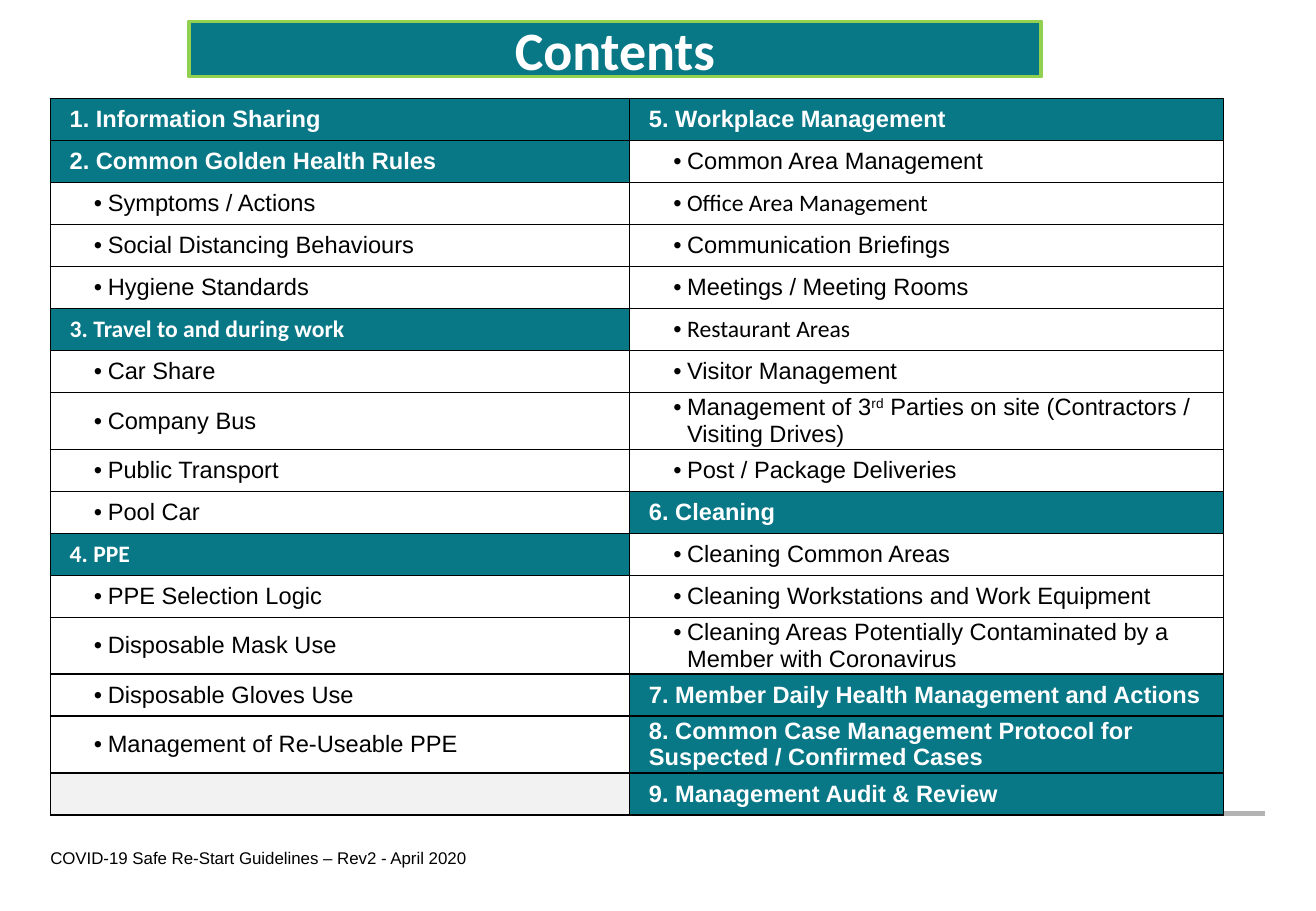
"""Build the contents slide of the safe re-start guidelines."""
from lxml import etree
from pptx import Presentation
from pptx.dml.color import RGBColor
from pptx.enum.shapes import MSO_CONNECTOR, MSO_SHAPE
from pptx.enum.text import MSO_ANCHOR, PP_ALIGN
from pptx.oxml import parse_xml
from pptx.oxml.ns import qn
from pptx.util import Pt

NS = 'xmlns:a="http://schemas.openxmlformats.org/drawingml/2006/main"'
TEAL, GREEN, WHITE, BLACK = "087786", "92D050", "FFFFFF", "000000"
GREY, PALE = "B3B3B3", "F2F2F2"
LEFT = 29.8
ROW_H, TALL_ROW_H = 24.9, 33.4
TALL_ROWS = (7, 12, 14)
CALIBRI_TEXTS = ("Office Area Management", "3. Travel to and during work",
                 "Restaurant Areas", "4. PPE")

LEFT_COLUMN = [
    "1. Information Sharing",
    "2. Common Golden Health Rules",
    "Symptoms / Actions",
    "Social Distancing Behaviours",
    "Hygiene Standards",
    "3. Travel to and during work",
    "Car Share",
    "Company Bus",
    "Public Transport",
    "Pool Car",
    "4. PPE",
    "PPE Selection Logic",
    "Disposable Mask Use",
    "Disposable Gloves Use",
    "Management of Re-Useable PPE",
    "",
]
RIGHT_COLUMN = [
    "5. Workplace Management",
    "Common Area Management",
    "Office Area Management",
    "Communication Briefings",
    "Meetings / Meeting Rooms",
    "Restaurant Areas",
    "Visitor Management",
    "Management of 3^rd^ Parties on site (Contractors / Visiting Drives)",
    "Post / Package Deliveries",
    "6. Cleaning",
    "Cleaning Common Areas",
    "Cleaning Workstations and Work Equipment",
    "Cleaning Areas Potentially Contaminated by a Member with Coronavirus",
    "7. Member Daily Health Management and Actions",
    "8. Common Case Management Protocol for Suspected / Confirmed Cases",
    "9. Management Audit & Review",
]


def rgb(color):
    return RGBColor.from_string(color)


def style(r, size, name, color, bold=False):
    r.font.size = Pt(size)
    r.font.name = name
    r.font.bold = bold
    r.font.color.rgb = rgb(color)


prs = Presentation()
prs.slide_width, prs.slide_height = Pt(780), Pt(540)
s = prs.slides.add_slide(prs.slide_layouts[6])

rule = s.shapes.add_connector(MSO_CONNECTOR.STRAIGHT, Pt(LEFT), Pt(482.4), Pt(749.8), Pt(482.4))
rule.line.color.rgb = rgb(GREY)
rule.line.width = Pt(3)
etree.SubElement(rule._element.spPr, qn("a:effectLst"))

footer = s.shapes.add_textbox(Pt(LEFT), Pt(502.6), Pt(612.7), Pt(12.2))
tf = footer.text_frame
tf.word_wrap = True
tf.margin_left = tf.margin_right = tf.margin_top = tf.margin_bottom = 0
tf.text = "COVID-19 Safe Re-Start Guidelines – Rev2 - April 2020"
style(tf.paragraphs[0].runs[0], 10, "Arial", BLACK)

heights = [TALL_ROW_H if i in TALL_ROWS else ROW_H for i in range(len(LEFT_COLUMN))]
frame = s.shapes.add_table(len(heights), 2, Pt(LEFT), Pt(58.5), Pt(695.5), Pt(sum(heights)))
table = frame.table
table.first_row = table.horz_banding = False
table.columns[0].width, table.columns[1].width = Pt(343.4), Pt(352.1)
for row, height in zip(table.rows, heights):
    row.height = Pt(height)

for col, texts in enumerate((LEFT_COLUMN, RIGHT_COLUMN)):
    for row, text in enumerate(texts):
        cell = table.cell(row, col)
        heading = text[:1].isdigit()
        cell.vertical_anchor = MSO_ANCHOR.MIDDLE
        cell.margin_left, cell.margin_right = Pt(11.5), Pt(0.7)
        cell.margin_top = cell.margin_bottom = 0
        if heading or not text:
            cell.fill.solid()
            cell.fill.fore_color.rgb = rgb(TEAL if heading else PALE)
        else:
            cell.fill.background()
        for i, side in enumerate(("lnL", "lnR", "lnT", "lnB")):
            cell._tc.tcPr.insert(i, parse_xml(
                f'<a:{side} {NS} w="12700"><a:solidFill><a:srgbClr val="{BLACK}"/>'
                f'</a:solidFill></a:{side}>'))
        if not text:
            continue
        p = cell.text_frame.paragraphs[0]
        if not heading:
            pPr = p._p.get_or_add_pPr()
            pPr.set("marL", str(Pt(22.6)))
            pPr.set("indent", str(Pt(-8.2)))
            pPr.append(parse_xml(f'<a:buFont {NS} typeface="Arial"/>'))
            pPr.append(parse_xml(f'<a:buChar {NS} char="•"/>'))
        font = "Calibri" if text in CALIBRI_TEXTS else "Arial"
        for i, part in enumerate(text.split("^")):
            r = p.add_run()
            r.text = part
            style(r, 14, font, WHITE if heading else BLACK, heading)
            if i % 2:
                r._r.get_or_add_rPr().set("baseline", "30000")

title = s.shapes.add_shape(MSO_SHAPE.RECTANGLE, Pt(111.8), Pt(12.8), Pt(505.4), Pt(32.6))
title.shadow.inherit = False
title.fill.solid()
title.fill.fore_color.rgb = rgb(TEAL)
title.line.color.rgb = rgb(GREEN)
title.line.width = Pt(2.25)
tf = title.text_frame
tf.word_wrap = True
tf.vertical_anchor = MSO_ANCHOR.MIDDLE
tf.text = "Contents"
tf.paragraphs[0].alignment = PP_ALIGN.CENTER
style(tf.paragraphs[0].runs[0], 32, "Calibri", WHITE, True)

prs.save("out.pptx")
